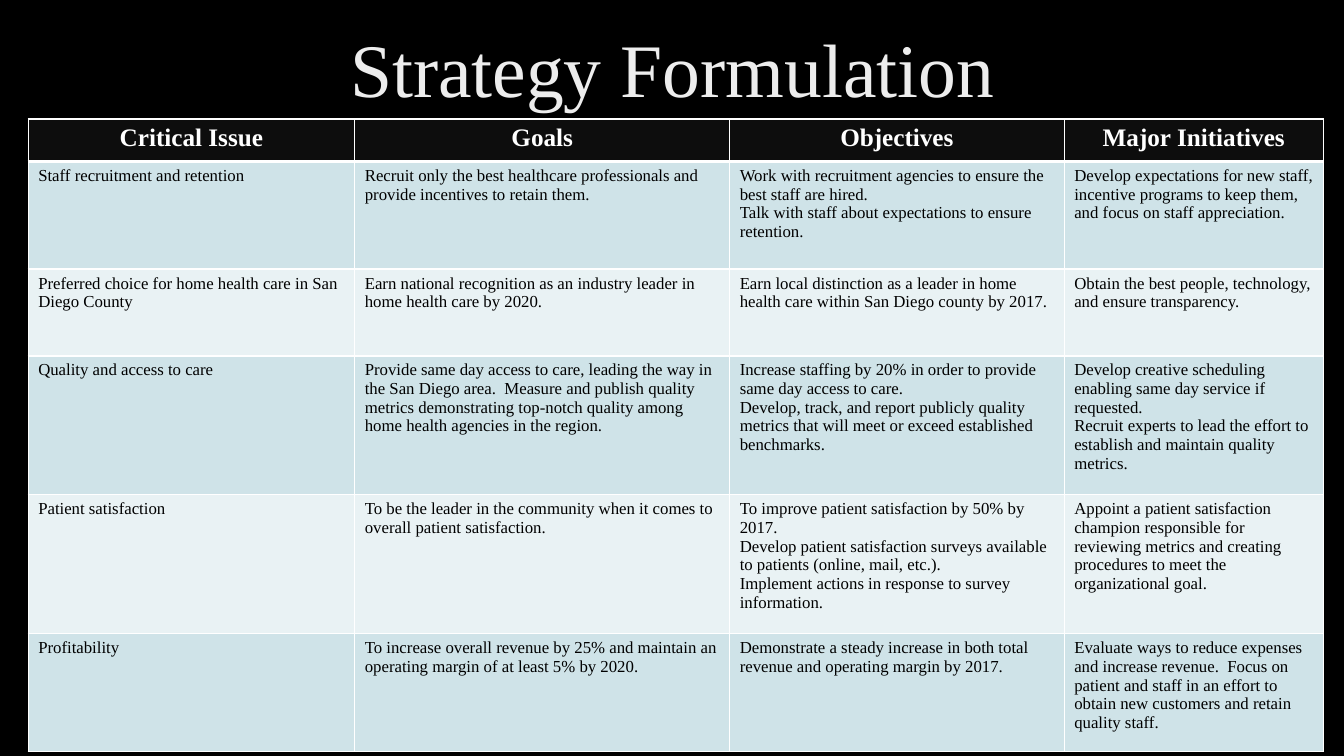
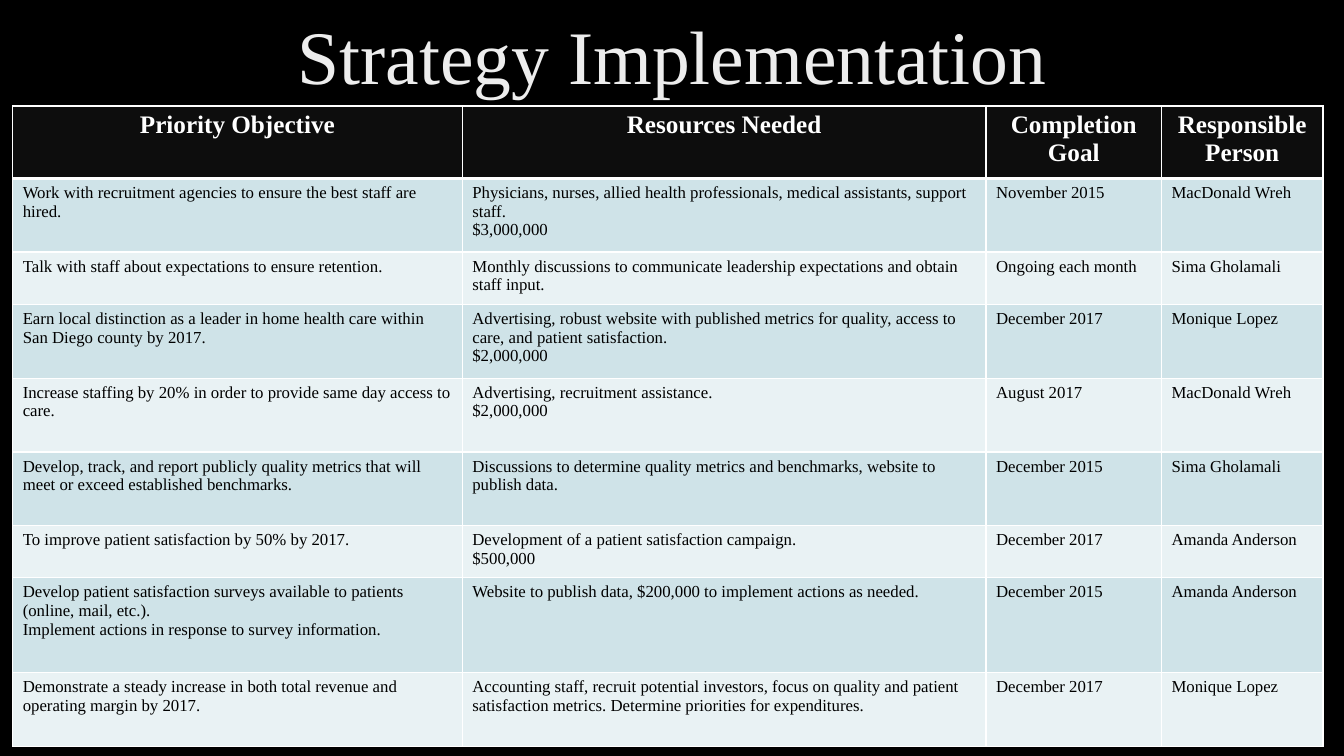
from dataclasses import dataclass

from lxml.etree import SubElement
from pptx import Presentation
from pptx.dml.color import RGBColor as Color
from pptx.enum.text import MSO_ANCHOR as Anchor, PP_ALIGN as Align
from pptx.oxml.ns import qn
from pptx.util import Cm, Pt


@dataclass(frozen=True)
class Theme:
    font: str = "Times New Roman"
    background: str = "000000"
    title: str = "EDEDED"
    header_fill: str = "0D0D0D"
    header_text: str = "FFFFFF"
    body_text: str = "000000"
    bands: tuple = ("CFE3E8", "E9F2F4")
    border: str = "FFFFFF"
    thin: int = 1
    thick: int = 3
    title_size: int = 54
    header_size: int = 18
    body_size: int = 12


THEME = Theme()


def text_format(size, color, bold=False, **para):
    span = {"name": THEME.font, "size": Pt(size), "bold": bold}
    return {"span": span, "color": color, "para": para}


TITLE = text_format(THEME.title_size, THEME.title, alignment=Align.CENTER, line_spacing=0.9)
HEADER = text_format(THEME.header_size, THEME.header_text, True, alignment=Align.CENTER)
BODY = text_format(THEME.body_size, THEME.body_text, alignment=Align.LEFT)

FORMULATION = {
    "title": "Strategy Formulation",
    "title_top": 1.02,
    "title_height": 1.63,
    "left": 0.71,
    "top": 3,
    "columns": [8.23, 9.45, 8.43, 6.53],
    "heights": [1.07, 2.71, 2.19, 3.5, 3.5, 2.97],
    "rows": [
        ["Critical Issue", "Goals", "Objectives", "Major Initiatives"],
        [
            "Staff recruitment and retention",
            "Recruit only the best healthcare professionals and provide incentives to retain them.",
            "Work with recruitment agencies to ensure the best staff are hired.\n"
            "Talk with staff about expectations to ensure retention.",
            "Develop expectations for new staff, incentive programs to keep them, "
            "and focus on staff appreciation.",
        ],
        [
            "Preferred choice for home health care in San Diego County",
            "Earn national recognition as an industry leader in home health care by 2020.",
            "Earn local distinction as a leader in home health care within San Diego county by 2017.",
            "Obtain the best people, technology, and ensure transparency.",
        ],
        [
            "Quality and access to care",
            "Provide same day access to care, leading the way in the San Diego area.  "
            "Measure and publish quality metrics demonstrating top-notch quality among "
            "home health agencies in the region.",
            "Increase staffing by 20% in order to provide same day access to care.\n"
            "Develop, track, and report publicly quality metrics that will meet or exceed "
            "established benchmarks.",
            "Develop creative scheduling enabling same day service if requested.\n"
            "Recruit experts to lead the effort to establish and maintain quality metrics.",
        ],
        [
            "Patient satisfaction",
            "To be the leader in the community when it comes to overall patient satisfaction.",
            "To improve patient satisfaction by 50% by 2017.\n"
            "Develop patient satisfaction surveys available to patients (online, mail, etc.).\n"
            "Implement actions in response to survey information.",
            "Appoint a patient satisfaction champion responsible for reviewing metrics and "
            "creating procedures to meet the organizational goal.",
        ],
        [
            "Profitability",
            "To increase overall revenue by 25% and maintain an operating margin of at least 5% by 2020.",
            "Demonstrate a steady increase in both total revenue and operating margin by 2017.",
            "Evaluate ways to reduce expenses and increase revenue.  Focus on patient and staff "
            "in an effort to obtain new customers and retain quality staff.",
        ],
    ],
}

IMPLEMENTATION = {
    "title": "Strategy Implementation",
    "title_top": 0,
    "title_height": 3,
    "left": 0.32,
    "top": 2.67,
    "columns": [11.33, 13.2, 4.42, 4.07],
    "heights": [1.83, 1.85, 1.32, 1.86, 1.86, 1.86, 1.31, 2.39, 1.86],
    "rows": [
        ["Priority Objective", "Resources Needed", "Completion Goal", "Responsible Person"],
        [
            "Work with recruitment agencies to ensure the best staff are hired.",
            "Physicians, nurses, allied health professionals, medical assistants, support staff.\n"
            "$3,000,000",
            "November 2015",
            "MacDonald Wreh",
        ],
        [
            "Talk with staff about expectations to ensure retention.",
            "Monthly discussions to communicate leadership expectations and obtain staff input.",
            "Ongoing each month",
            "Sima Gholamali",
        ],
        [
            "Earn local distinction as a leader in home health care within San Diego county by 2017.",
            "Advertising, robust website with published metrics for quality, access to care, "
            "and patient satisfaction.\n$2,000,000",
            "December 2017",
            "Monique Lopez",
        ],
        [
            "Increase staffing by 20% in order to provide same day access to care.",
            "Advertising, recruitment assistance.\n$2,000,000",
            "August 2017",
            "MacDonald Wreh",
        ],
        [
            "Develop, track, and report publicly quality metrics that will meet or exceed "
            "established benchmarks.",
            "Discussions to determine quality metrics and benchmarks, website to publish data.",
            "December 2015",
            "Sima Gholamali",
        ],
        [
            "To improve patient satisfaction by 50% by 2017.",
            "Development of a patient satisfaction campaign.\n$500,000",
            "December 2017",
            "Amanda Anderson",
        ],
        [
            "Develop patient satisfaction surveys available to patients (online, mail, etc.).\n"
            "Implement actions in response to survey information.",
            "Website to publish data, $200,000 to implement actions as needed.",
            "December 2015",
            "Amanda Anderson",
        ],
        [
            "Demonstrate a steady increase in both total revenue and operating margin by 2017.",
            "Accounting staff, recruit potential investors, focus on quality and patient "
            "satisfaction metrics. Determine priorities for expenditures.",
            "December 2017",
            "Monique Lopez",
        ],
    ],
}


def set_all(target, values):
    for name, value in values.items():
        setattr(target, name, value)


def write_text(frame, text, style):
    frame.text = text
    for para in frame.paragraphs:
        set_all(para, style["para"])
        for span in para.runs:
            set_all(span.font, style["span"])
            span.font.color.rgb = Color.from_string(style["color"])


def paint(fill, color):
    fill.solid()
    fill.fore_color.rgb = Color.from_string(color)


def add_title(page, text, top, height):
    box = page.shapes.add_textbox(Cm(2.34), Cm(top), Cm(29.21), Cm(height))
    set_all(box.text_frame, {"word_wrap": True, "vertical_anchor": Anchor.MIDDLE})
    write_text(box.text_frame, text, TITLE)


def add_borders(cell, row):
    widths = {
        "L": THEME.thin,
        "R": THEME.thin,
        "T": THEME.thick if row == 1 else THEME.thin,
        "B": THEME.thick if row == 0 else THEME.thin,
    }
    properties = cell._tc.get_or_add_tcPr()
    for side, width in widths.items():
        line = SubElement(properties, qn(f"a:ln{side}"), w=str(Pt(width)))
        SubElement(SubElement(line, qn("a:solidFill")), qn("a:srgbClr"), val=THEME.border)


def fill_cell(cell, text, row):
    add_borders(cell, row)
    paint(cell.fill, THEME.bands[(row - 1) % 2] if row else THEME.header_fill)
    write_text(cell.text_frame, text, BODY if row else HEADER)


def add_grid(page, content):
    rows, columns, heights = (content[key] for key in ("rows", "columns", "heights"))
    table = page.shapes.add_table(
        len(rows), len(columns), Cm(content["left"]), Cm(content["top"]),
        Cm(sum(columns)), Cm(sum(heights)),
    ).table
    table.horz_banding = False
    for column, width in zip(table.columns, columns):
        column.width = Cm(width)
    for index, (row, height) in enumerate(zip(table.rows, heights)):
        row.height = Cm(height)
        for cell, text in zip(row.cells, rows[index]):
            fill_cell(cell, text, index)


def main():
    deck = Presentation()
    set_all(deck, {"slide_width": Cm(33.87), "slide_height": Cm(19.05)})
    paint(deck.slide_master.background.fill, THEME.background)
    for content in (FORMULATION, IMPLEMENTATION):
        page = deck.slides.add_slide(deck.slide_layouts[6])
        add_title(page, content["title"], content["title_top"], content["title_height"])
        add_grid(page, content)
    deck.save("out.pptx")


if __name__ == "__main__":
    main()
